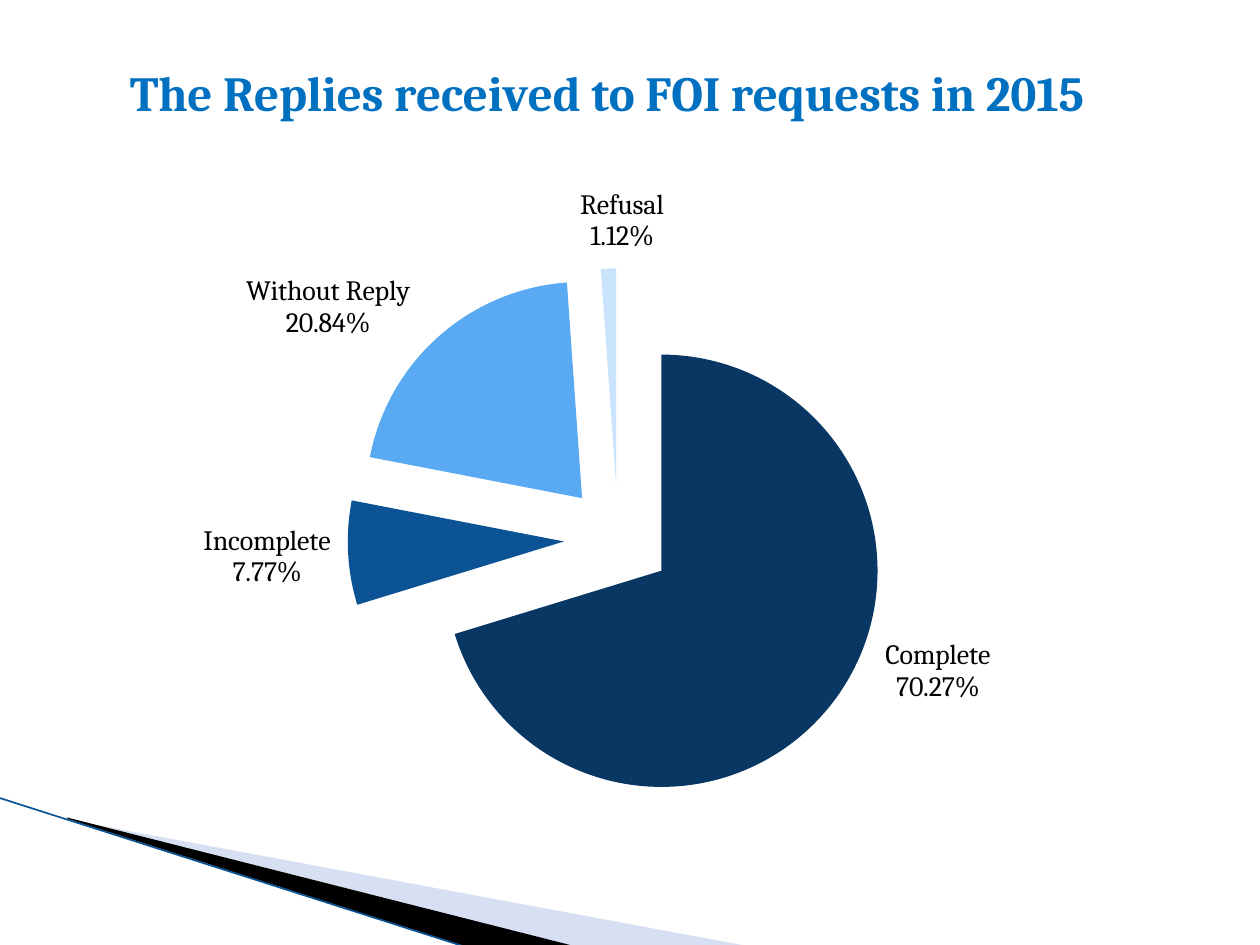
"""Build a slide with an exploded pie chart of replies to FOI requests."""
from copy import deepcopy

from lxml import etree
from pptx import Presentation
from pptx.chart.data import CategoryChartData
from pptx.dml.color import RGBColor
from pptx.enum.chart import XL_CHART_TYPE, XL_LABEL_POSITION
from pptx.enum.shapes import MSO_CONNECTOR
from pptx.oxml import parse_xml
from pptx.oxml.ns import nsdecls, qn
from pptx.util import Cm, Pt

PIE = XL_CHART_TYPE.PIE
OUTSIDE = XL_LABEL_POSITION.OUTSIDE_END
STRAIGHT = MSO_CONNECTOR.STRAIGHT
BLACK = RGBColor(0x00, 0x00, 0x00)
TITLE_BLUE = RGBColor(0x00, 0x70, 0xC0)
PALE_BLUE = RGBColor(0x9D, 0xB2, 0xE1)
EDGE_BLUE = RGBColor(0x0B, 0x53, 0x94)
FONT = "Cambria"

TITLE = "The Replies received to FOI requests in 2015"
REPLIES = [
    ("Complete", 70.27, RGBColor(0x08, 0x37, 0x63), (0.035, -0.071)),
    ("Incomplete", 7.77, RGBColor(0x0B, 0x53, 0x94), (-0.008, 0.004)),
    ("Without Reply", 20.84, RGBColor(0x59, 0xAA, 0xF2), (-0.019, 0.009)),
    ("Refusal", 1.12, RGBColor(0xC8, 0xE3, 0xFB), (0.011, -0.01)),
]
EXPLOSION = 25
WEDGES = [
    ([(1.4, 16.53), (15.11, 19.08), (11.58, 19.08), (1.4, 16.51)],
     (1.98, 13.89, 10.57, 4.01), PALE_BLUE, 40),
    ([(1.35, 16.48), (11.61, 19.08), (9.45, 19.1), (1.37, 16.51)],
     (-0.15, 16.08, 10.57, 2.34), BLACK, 100),
]
EDGE = [(-0.03, 16.08), (9.42, 19.1)]


def format_font(font, size, color=BLACK, bold=False):
    """Set the face, size, colour and weight of a font."""
    font.name, font.size, font.bold = FONT, Pt(size), bold
    font.color.rgb = color


def reframe(shape, frame):
    """Give a freeform another frame while its outline stays in place."""
    left, top, width, height = [Cm(length) for length in frame]
    outline = shape._element.find(".//" + qn("a:path"))
    for point in outline.iter(qn("a:pt")):
        point.set("x", str(int(point.get("x")) + shape.left - left))
        point.set("y", str(int(point.get("y")) + shape.top - top))
    outline.set("w", str(width))
    outline.set("h", str(height))
    shape.left, shape.top, shape.width, shape.height = left, top, width, height


def add_wedge(page, points, frame, color, opacity):
    """Draw one filled wedge of the corner decoration."""
    corners = [(Cm(x), Cm(y)) for x, y in points]
    builder = page.shapes.build_freeform(*corners[0])
    builder.add_line_segments(corners[1:], close=True)
    wedge = builder.convert_to_shape()
    reframe(wedge, frame)
    wedge.shadow.inherit = False
    wedge.fill.solid()
    wedge.fill.fore_color.rgb = color
    wedge.line.fill.background()
    if opacity < 100:
        tint = wedge._element.spPr.find(".//" + qn("a:srgbClr"))
        etree.SubElement(tint, qn("a:alpha"), val=str(opacity * 1000))


def add_edge(page):
    """Draw the thin line along the corner decoration."""
    (left, top), (right, bottom) = EDGE
    edge = page.shapes.add_connector(
        STRAIGHT, Cm(left), Cm(top), Cm(right), Cm(bottom)
    )
    edge.line.color.rgb = EDGE_BLUE
    edge.line.width = Pt(0.95)
    etree.SubElement(edge._element.spPr, qn("a:effectLst"))


def set_layout(element, index, **settings):
    """Give a chart part a manual layout."""
    for old in element.findall(qn("c:layout")):
        element.remove(old)
    layout = parse_xml(f"<c:layout {nsdecls('c')}><c:manualLayout/></c:layout>")
    for name, value in settings.items():
        etree.SubElement(layout[0], qn(f"c:{name}"), val=str(value))
    element.insert(index, layout)


def format_labels(series):
    """Show category and percentage outside each slice."""
    labels = series.data_labels
    labels.show_value = False
    labels.show_category_name = labels.show_percentage = True
    labels.number_format, labels.number_format_is_linked = "0.00%", False
    labels.position = OUTSIDE
    format_font(labels.font, 16)
    group = labels._element
    leader = group.find(qn("c:showLeaderLines"))
    if leader is not None:
        group.remove(leader)
    etree.SubElement(group, qn("c:separator")).text = "\n"
    shared = list(group)
    for index, (_, _, _, (x, y)) in enumerate(REPLIES):
        label = parse_xml(f'<c:dLbl {nsdecls("c")}><c:idx val="{index}"/></c:dLbl>')
        label.extend(deepcopy(shared))
        set_layout(label, 1, x=x, y=y)
        group.insert(index, label)
    etree.SubElement(group, qn("c:showLeaderLines"), val="0")


def add_pie(page):
    """Add the titled pie chart."""
    data = CategoryChartData()
    data.categories = [reply[0] for reply in REPLIES]
    data.add_series("Series 1", [reply[1] for reply in REPLIES])
    chart = page.shapes.add_chart(
        PIE, Cm(0), Cm(0.43), Cm(25.4), Cm(18.14), data
    ).chart
    format_font(chart.font, 10)
    chart.has_legend = False
    chart.has_title = True
    heading = chart.chart_title.text_frame
    heading.text = TITLE
    format_font(heading.paragraphs[0].runs[0].font, 28, TITLE_BLUE, True)
    set_layout(chart.chart_title._element, 1,
               xMode="edge", yMode="edge", x=0.096, y=0.036)
    set_layout(chart._chartSpace.find(".//" + qn("c:plotArea")), 0,
               layoutTarget="inner", xMode="edge", yMode="edge",
               x=0.276, y=0.252, w=0.429, h=0.646)

    plot = chart.plots[0]
    plot.vary_by_categories = True
    series = plot.series[0]
    for index, (_, _, color, _) in enumerate(REPLIES):
        style = series.points[index].format
        style.fill.solid()
        style.fill.fore_color.rgb = color
        style.line.fill.background()
    explosion = parse_xml(f'<c:explosion {nsdecls("c")} val="{EXPLOSION}"/>')
    series._element.find(qn("c:dPt")).addprevious(explosion)
    format_labels(series)


def main():
    """Assemble and save the deck."""
    deck = Presentation()
    deck.slide_width, deck.slide_height = Cm(25.4), Cm(19.05)
    page = deck.slides.add_slide(deck.slide_layouts[6])
    for wedge in WEDGES:
        add_wedge(page, *wedge)
    add_edge(page)
    add_pie(page)
    deck.save("out.pptx")


if __name__ == "__main__":
    main()
